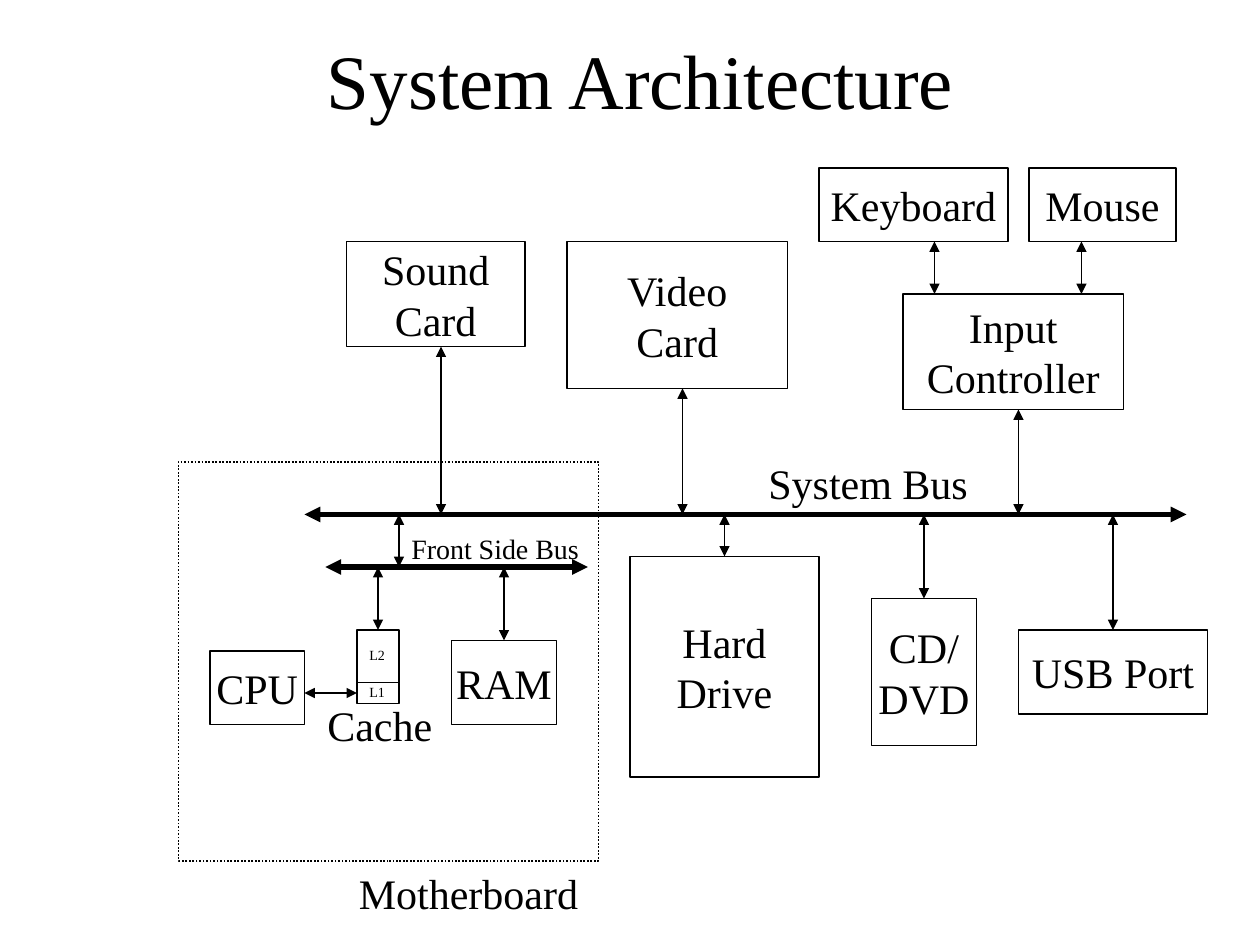
import pptx
import pptx.util
import pptx.dml.color
import pptx.enum.dml
import pptx.enum.shapes
import pptx.enum.text
import pptx.oxml.ns
import lxml.etree

PX = 9525  # EMU in one px, 96 px to the inch
BLACK = pptx.dml.color.RGBColor(0, 0, 0)
WHITE = pptx.dml.color.RGBColor(255, 255, 255)
FACE = "Times New Roman"
RECT = pptx.enum.shapes.MSO_SHAPE.RECTANGLE
STRAIGHT = pptx.enum.shapes.MSO_CONNECTOR.STRAIGHT
CENTER = pptx.enum.text.PP_ALIGN.CENTER
LEFT = pptx.enum.text.PP_ALIGN.LEFT
MIDDLE = pptx.enum.text.MSO_ANCHOR.MIDDLE
TOP = pptx.enum.text.MSO_ANCHOR.TOP
NONE = pptx.enum.text.MSO_AUTO_SIZE.NONE
GROW = pptx.enum.text.MSO_AUTO_SIZE.SHAPE_TO_FIT_TEXT

# Frame formats
BOXED = {"word_wrap": False, "auto_size": NONE, "vertical_anchor": MIDDLE}
LABEL = {"word_wrap": False, "auto_size": GROW, "vertical_anchor": TOP}
TITLE = {"word_wrap": True, "auto_size": NONE, "vertical_anchor": MIDDLE}

deck = pptx.Presentation()
deck.slide_width, deck.slide_height = 960 * PX, 720 * PX
slide = deck.slides.add_slide(deck.slide_layouts[6])
shapes = slide.shapes


def write(shape, text, size, look, align):
    frame = shape.text_frame
    frame.text = text
    for key, value in look.items():
        setattr(frame, key, value)
    for para in frame.paragraphs:
        para.alignment = align
        font = {"name": FACE, "size": pptx.util.Pt(size), "bold": False}
        for key, value in font.items():
            setattr(para.font, key, value)
        para.font.color.rgb = BLACK


def link(x1, y1, x2, y2, width=0.75, heads=("headEnd", "tailEnd")):
    line = shapes.add_connector(STRAIGHT, x1 * PX, y1 * PX, x2 * PX, y2 * PX)
    line.line.color.rgb = BLACK
    line.line.width = pptx.util.Pt(width)
    pen = line.line._get_or_add_ln()
    for head in heads:
        lxml.etree.SubElement(pen, pptx.oxml.ns.qn("a:" + head), type="triangle")
    props = line._element.spPr
    lxml.etree.SubElement(props, pptx.oxml.ns.qn("a:effectLst"))


# Title
title = shapes.add_textbox(80 * PX, 0, 816 * PX, 120 * PX)
write(title, "System Architecture", 44, TITLE, CENTER)

# Parts of the system; the cache has its own labels
parts = [
    ("CPU", 160, 496, 72, 56),
    ("", 272, 480, 32, 56),
    ("RAM", 344, 488, 80, 64),
    ("Hard\nDrive", 480, 424, 144, 168),
    ("CD/\nDVD", 664, 456, 80, 112),
    ("USB Port", 776, 480, 144, 64),
    ("Sound\nCard", 264, 184, 136, 80),
    ("Video\nCard", 432, 184, 168, 112),
    ("Input\nController", 688, 224, 168, 88),
    ("Keyboard", 624, 128, 144, 56),
    ("Mouse", 784, 128, 112, 56),
]
for text, *place in parts:
    box = shapes.add_shape(RECT, *(n * PX for n in place))
    box.shadow.inherit = False
    box.fill.solid()
    box.fill.fore_color.rgb = WHITE
    box.line.color.rgb = BLACK
    box.line.width = pptx.util.Pt(0.75)
    if text:
        write(box, text, 24, BOXED, CENTER)

# Motherboard outline
board = shapes.add_shape(RECT, 136 * PX, 352 * PX, 320 * PX, 304 * PX)
board.shadow.inherit = False
board.fill.background()
board.line.color.rgb = BLACK
board.line.width = pptx.util.Pt(1)
board.line.dash_style = pptx.enum.dml.MSO_LINE.ROUND_DOT

# Buses
MAIN, FRONT = 392, 432
link(904, MAIN, 232, MAIN, 3)
link(448, FRONT, 248, FRONT, 3)

# Upright links: x, top, bottom
for x, top, end in [
    (336, 264, MAIN),
    (520, 296, MAIN),
    (776, 312, MAIN),
    (712, 184, 224),
    (824, 184, 224),
    (552, MAIN, 424),
    (704, MAIN, 456),
    (848, MAIN, 480),
    (304, MAIN, FRONT),
    (288, FRONT, 480),
    (384, FRONT, 488),
]:
    link(x, end, x, top)

# CPU to cache, and the split between cache levels
link(232, 528, 272, 528)
link(272, 520, 304, 520, heads=())

# Labels
for text, size, *place in [
    ("Cache", 24, 240, 528, 99, 48),
    ("Motherboard", 24, 264, 656, 186, 48),
    ("System Bus", 24, 576, 344, 171, 48),
    ("Front Side Bus", 16, 304, 400, 148, 36),
    ("L1", 8, 272, 516, 31, 22),
    ("L2", 8, 272, 488, 31, 22),
]:
    label = shapes.add_textbox(*(n * PX for n in place))
    write(label, text, size, LABEL, LEFT)

deck.save("out.pptx")
